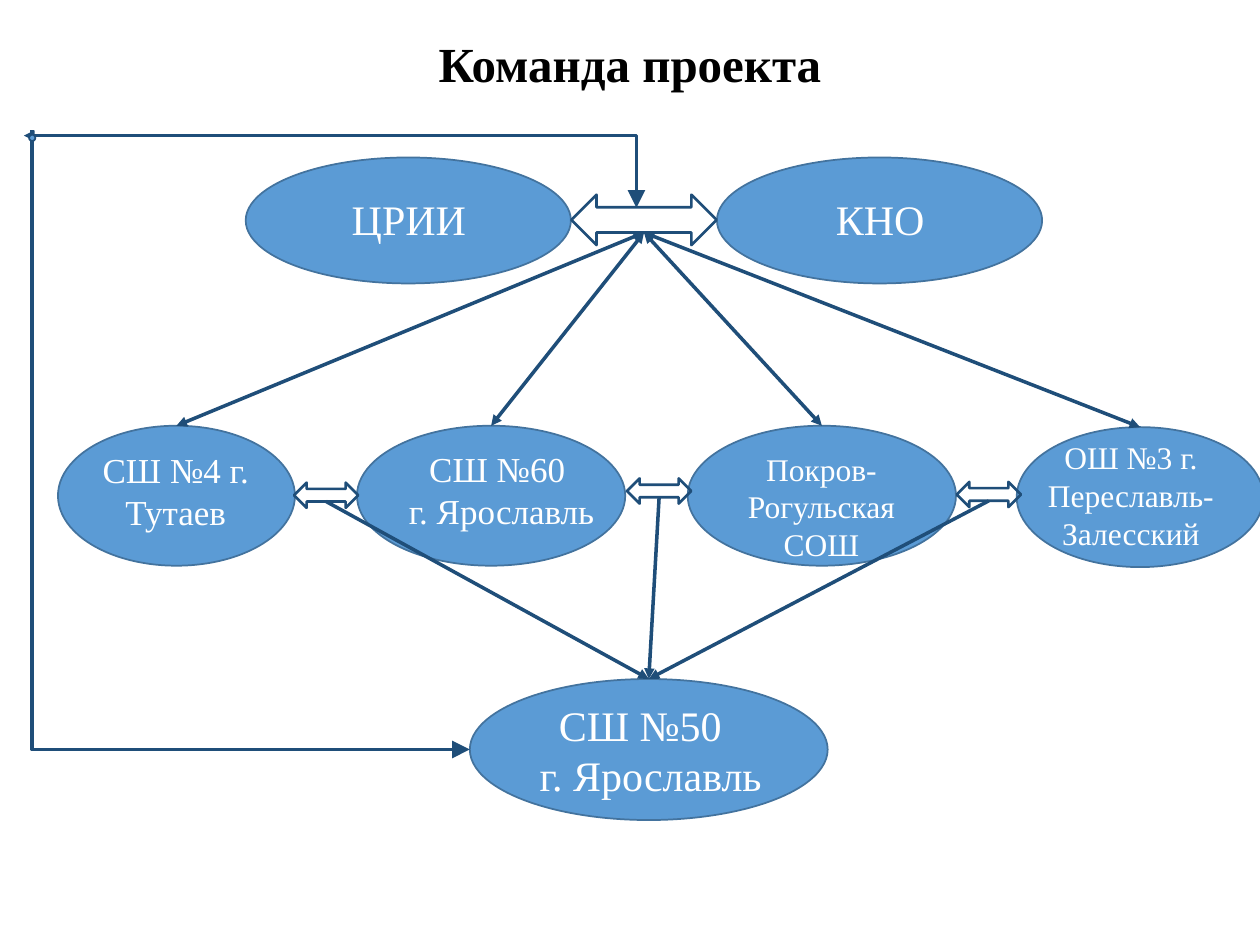
from lxml import etree
from pptx import Presentation
from pptx.dml.color import RGBColor
from pptx.enum.shapes import MSO_CONNECTOR, MSO_SHAPE
from pptx.enum.text import MSO_ANCHOR, MSO_AUTO_SIZE, PP_ALIGN
from pptx.oxml.ns import qn
from pptx.util import Pt

ELLIPSE = MSO_SHAPE.OVAL
DOUBLE_ARROW = MSO_SHAPE.LEFT_RIGHT_ARROW
STRAIGHT = MSO_CONNECTOR.STRAIGHT
ELBOW = MSO_CONNECTOR.ELBOW
CENTER = PP_ALIGN.CENTER
BOTTOM = MSO_ANCHOR.BOTTOM
FIT_SHAPE = MSO_AUTO_SIZE.SHAPE_TO_FIT_TEXT

FONT = "Times New Roman"
BLUE, EDGE, NAVY = "5B9BD5", "43739E", "1F4E79"
WHITE, BLACK = "FFFFFF", "000000"

# ellipse box, label box, label, font size
CENTRES = [
    ((140.4, 90, 185.8, 72), (182.9, 107.3, 101.5, 36), "ЦРИИ", 24),
    ((409.7, 90, 185.8, 72), (452.2, 107.3, 101.5, 36), "КНО", 24),
]
SCHOOLS = [
    ((33.1, 243.3, 135.4, 80), (49.7, 252.7, 101.5, 55.5), "СШ №4 г. Тутаев", 20),
    ((204, 243.3, 153.3, 80), (222.5, 252, 128.2, 55.5), "СШ №60 \nг. Ярославль", 20),
    ((393, 243.3, 153.3, 80), (404.6, 253.4, 129.6, 72.7), "Покров-Рогульская СОШ", 18),
    ((581, 244.1, 141, 80), (585.4, 247, 121.7, 72.7), "ОШ №3 г. Переславль-Залесский", 18),
]
LEAD_SCHOOL = ((268.5, 388, 204.5, 80.6), (291.6, 396, 160.6, 65.5), "СШ №50  \nг. Ярославль", 24)
HUB_ARROW = (326.5, 111.3, 83, 28.8)
SCHOOL_ARROWS = [(left, top, 36.7, 14.4)
                 for left, top in ((168, 275.8), (358.3, 273.4), (546.7, 275.4))]


def color(hex_text):
    return RGBColor.from_string(hex_text)


def points(values):
    return [Pt(value) for value in values]


def format_text(text_frame, text, size, hex_text, bold=False):
    text_frame.text = text
    for paragraph in text_frame.paragraphs:
        paragraph.alignment = CENTER
        for run in paragraph.runs:
            run.font.name = FONT
            run.font.size = Pt(size)
            run.font.bold = bold
            run.font.color.rgb = color(hex_text)


def add_title(slide, text):
    title = slide.shapes.title
    title.left, title.top, title.width, title.height = points((49.7, 13, 620.6, 43.2))
    frame = title.text_frame
    frame.vertical_anchor = BOTTOM
    frame.margin_left = frame.margin_right = Pt(5)
    frame.margin_top = frame.margin_bottom = Pt(2.9)
    format_text(frame, text, 28, BLACK, bold=True)
    frame.paragraphs[0].line_spacing = 0.9


def add_outlined(slide, kind, box, line_color, line_width, fill=None):
    shape = slide.shapes.add_shape(kind, *points(box))
    shape.shadow.inherit = False
    if fill:
        shape.fill.solid()
        shape.fill.fore_color.rgb = color(fill)
    else:
        shape.fill.background()
    shape.line.color.rgb = color(line_color)
    shape.line.width = Pt(line_width)


def add_member(slide, ellipse, label_box, label, size):
    add_outlined(slide, ELLIPSE, ellipse, EDGE, 1, BLUE)
    frame = slide.shapes.add_textbox(*points(label_box)).text_frame
    frame.word_wrap = True
    frame.auto_size = FIT_SHAPE
    format_text(frame, label, size, WHITE)


def add_double_arrow(slide, box):
    add_outlined(slide, DOUBLE_ARROW, box, NAVY, 1.5)


def add_link(slide, start, end, head=None, tail="med", kind=STRAIGHT):
    """Join two points; head and tail are arrowhead sizes, or None."""
    connector = slide.shapes.add_connector(kind, *points(start + end))
    connector.line.color.rgb = color(NAVY)
    connector.line.width = Pt(2)
    properties = connector._element.spPr
    if kind == ELBOW:
        properties.find(qn("a:prstGeom")).set("prst", "bentConnector2")
    line = properties.find(qn("a:ln"))
    for tag, size in (("a:headEnd", head), ("a:tailEnd", tail)):
        if size:
            etree.SubElement(line, qn(tag), type="triangle", w=size, len=size)
    etree.SubElement(properties, qn("a:effectLst"))


def top_middle(box):
    left, top, width, _ = box
    return left + width / 2, top


def arrow_underside(box):
    """Middle of the lower edge of a double arrow's shaft."""
    left, top, width, height = box
    return left + width / 2, top + height * 0.75


def main():
    presentation = Presentation()
    presentation.slide_width, presentation.slide_height = Pt(720), Pt(540)
    slide = presentation.slides.add_slide(presentation.slide_layouts[5])
    add_title(slide, "Команда проекта")

    for member in CENTRES + SCHOOLS + [LEAD_SCHOOL]:
        add_member(slide, *member)

    add_double_arrow(slide, HUB_ARROW)
    for school in SCHOOLS:
        add_link(slide, arrow_underside(HUB_ARROW), top_middle(school[0]), head="med")

    lead_ellipse = LEAD_SCHOOL[0]
    for box in SCHOOL_ARROWS:
        add_double_arrow(slide, box)
        add_link(slide, arrow_underside(box), top_middle(lead_ellipse))

    left, top, _, height = lead_ellipse
    add_link(slide, (left, top + height / 2), (18.4, 74.2),
             head="lg", tail=None, kind=ELBOW)
    add_link(slide, (13.7, 77.5), (363.7, 118.7), head="med", tail="lg", kind=ELBOW)
    add_outlined(slide, ELLIPSE, (16.6, 77, 3.6, 3.6), NAVY, 1, BLUE)

    presentation.save("out.pptx")


if __name__ == "__main__":
    main()
